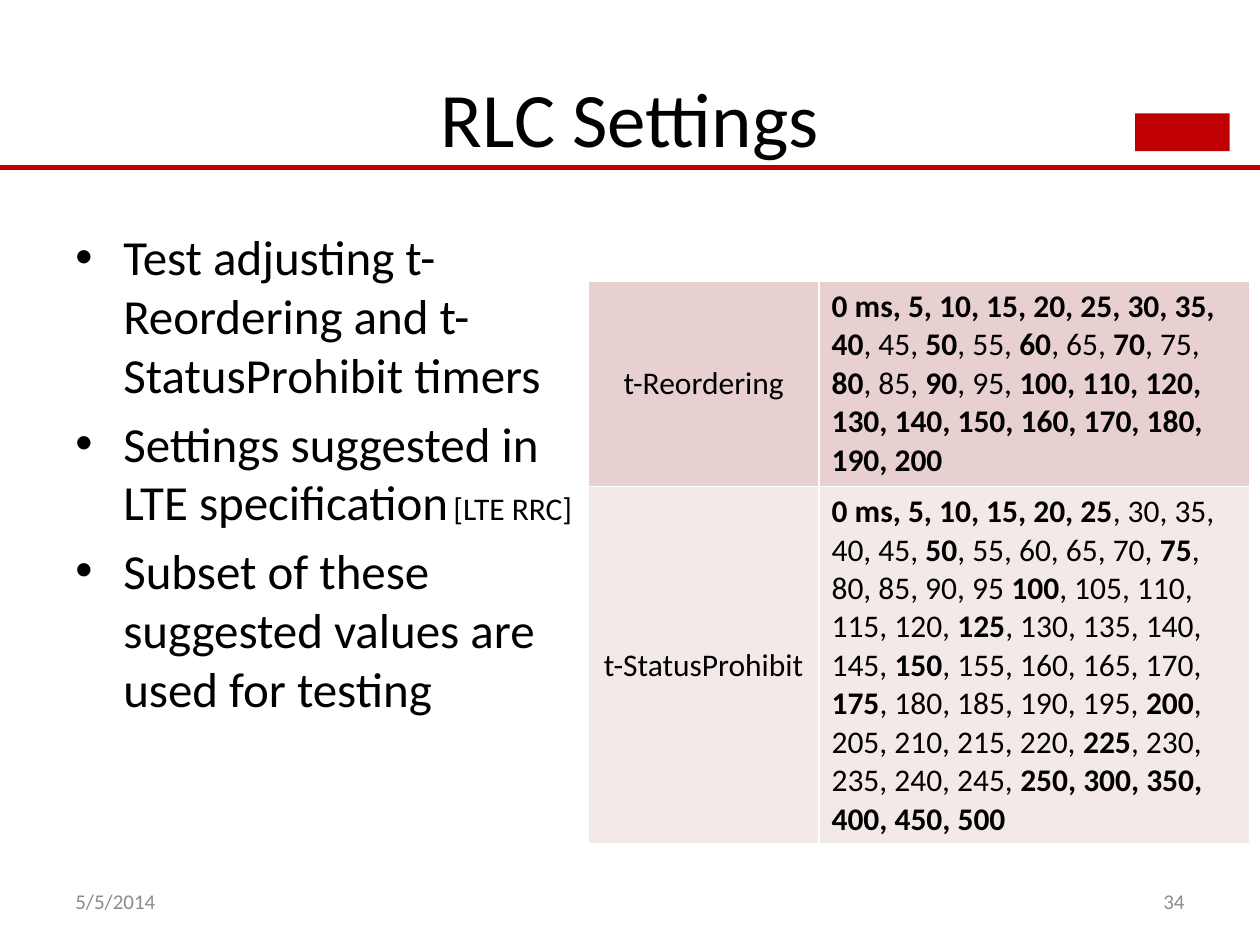
from lxml import etree
from pptx import Presentation
from pptx import util as u
from pptx.dml.color import RGBColor
from pptx.enum import shapes, text
from pptx.oxml import ns

FONT = "Calibri"
BLACK, RED, GREY, WHITE = "000000", "C00000", "8C8C8C", "FFFFFF"
ALIGN, ANCHOR = text.PP_ALIGN, text.MSO_ANCHOR


def colour(value):
    return RGBColor.from_string(value)


def inches(box):
    return [u.Inches(length) for length in box]


def style(font, size, fill=BLACK, bold=False):
    font.name, font.size, font.bold = FONT, u.Pt(size), bold
    font.color.rgb = colour(fill)


def add_label(slide, box, words, size, fill=BLACK,
              align=ALIGN.LEFT, anchor=ANCHOR.TOP, wrap=False):
    frame = slide.shapes.add_textbox(*inches(box)).text_frame
    frame.word_wrap, frame.vertical_anchor = wrap, anchor
    frame.text = words
    frame.paragraphs[0].alignment = align
    style(frame.paragraphs[0].runs[0].font, size, fill)


def add_header(slide, box, heading):
    title = slide.shapes.title
    title.left, title.top, title.width, title.height = inches(box)
    title.text_frame.text = heading
    title.text_frame.vertical_anchor = ANCHOR.MIDDLE
    title.text_frame.paragraphs[0].alignment = ALIGN.CENTER
    style(title.text_frame.paragraphs[0].runs[0].font, 44)

    badge = slide.shapes.add_shape(shapes.MSO_SHAPE.RECTANGLE,
                                   *inches((9.01, 0.9, 0.75, 0.3)))
    badge.shadow.inherit = False
    badge.fill.solid()
    badge.fill.fore_color.rgb = colour(RED)
    badge.line.fill.background()

    rule = slide.shapes.add_connector(shapes.MSO_CONNECTOR.STRAIGHT,
                                      *inches((0, 1.33, 10, 1.33)))
    rule.line.color.rgb = colour(RED)
    rule.line.width = u.Pt(3.25)
    etree.SubElement(rule._element.spPr, ns.qn("a:effectLst"))


def add_bullets(slide, box, points):
    frame = slide.shapes.add_textbox(*inches(box)).text_frame
    frame.word_wrap = True
    frame.text = "\n".join(points)
    for index, point in enumerate(frame.paragraphs):
        properties = point._p.get_or_add_pPr()
        properties.set("marL", str(u.Inches(0.38)))
        properties.set("indent", str(u.Inches(-0.38)))
        etree.SubElement(properties, ns.qn("a:buFont"), typeface="Arial")
        etree.SubElement(properties, ns.qn("a:buChar"), char="•")
        if index:
            point.space_before = u.Pt(5.6)
        style(point.runs[0].font, 28)


def add_borders(cell):
    properties = cell._tc.get_or_add_tcPr()
    for position, side in enumerate(("lnL", "lnR", "lnT", "lnB")):
        border = etree.Element(ns.qn(f"a:{side}"), w=str(u.Pt(1)))
        fill = etree.SubElement(border, ns.qn("a:solidFill"))
        etree.SubElement(fill, ns.qn("a:srgbClr"), val=WHITE)
        properties.insert(position, border)


def add_timer_table(slide, box, widths, heights, timers):
    table = slide.shapes.add_table(len(timers), 2, *inches(box)).table
    table.first_row = table.horz_banding = False
    for column, width in zip(table.columns, widths):
        column.width = u.Inches(width)
    for row, height, (timer, values, fill) in zip(table.rows, heights, timers):
        row.height = u.Inches(height)
        name_cell, values_cell = row.cells
        for cell in row.cells:
            cell.fill.solid()
            cell.fill.fore_color.rgb = colour(fill)
            add_borders(cell)
        name_cell.text = timer
        name_cell.vertical_anchor = ANCHOR.MIDDLE
        name = name_cell.text_frame.paragraphs[0]
        name.alignment = ALIGN.CENTER
        style(name.runs[0].font, 18)
        for index, part in enumerate(values.split("*")):
            if part:
                run = values_cell.text_frame.paragraphs[0].add_run()
                run.text = part
                style(run.font, 18, bold=index % 2 == 1)


def add_footer(slide, box, date, number):
    left, top, width, height = box
    part = 2.33
    for x, words, align in ((left, date, ALIGN.LEFT),
                            (left + width - part, number, ALIGN.RIGHT)):
        add_label(slide, (x, top, part, height), words, 12, GREY,
                  align=align, anchor=ANCHOR.MIDDLE, wrap=True)


POINTS = [
    "Test adjusting t-Reordering and t-StatusProhibit timers",
    "Settings suggested in LTE specification",
    "Subset of these suggested values are used for testing",
]
TIMERS = [
    ("t-Reordering",
     "*0 ms, 5, 10, 15, 20, 25, 30, 35, 40*, 45, *50*, 55, *60*, 65, *70*, 75, "
     "*80*, 85, *90*, 95, *100, 110, 120, 130, 140, 150, 160, 170, 180, 190, 200*",
     "E8D0D0"),
    ("t-StatusProhibit",
     "*0 ms, 5, 10, 15, 20, 25*, 30, 35, 40, 45, *50*, 55, 60, 65, 70, *75*, "
     "80, 85, 90, 95 *100*, 105, 110, 115, 120, *125*, 130, 135, 140, 145, "
     "*150*, 155, 160, 165, 170, *175*, 180, 185, 190, 195, *200*, 205, 210, "
     "215, 220, *225*, 230, 235, 240, 245, *250, 300, 350, 400, 450, 500*",
     "F4E9E9"),
]


def main():
    deck = Presentation()
    deck.slide_width, deck.slide_height = inches((10, 7.5))
    slide = deck.slides.add_slide(deck.slide_layouts[5])
    add_header(slide, (0.5, 0.3, 9, 1.25), "RLC Settings")
    add_bullets(slide, (0.5, 1.75, 4.42, 4.95), POINTS)
    add_timer_table(slide, (4.67, 2.23, 5.25, 4.47), (1.83, 3.42),
                    (1.63, 2.84), TIMERS)
    add_footer(slide, (0.5, 6.95, 9, 0.4), "5/5/2014", "34")
    add_label(slide, (3.5, 3.83, 1.15, 0.4), "[LTE RRC]", 18)
    deck.save("out.pptx")


if __name__ == "__main__":
    main()
